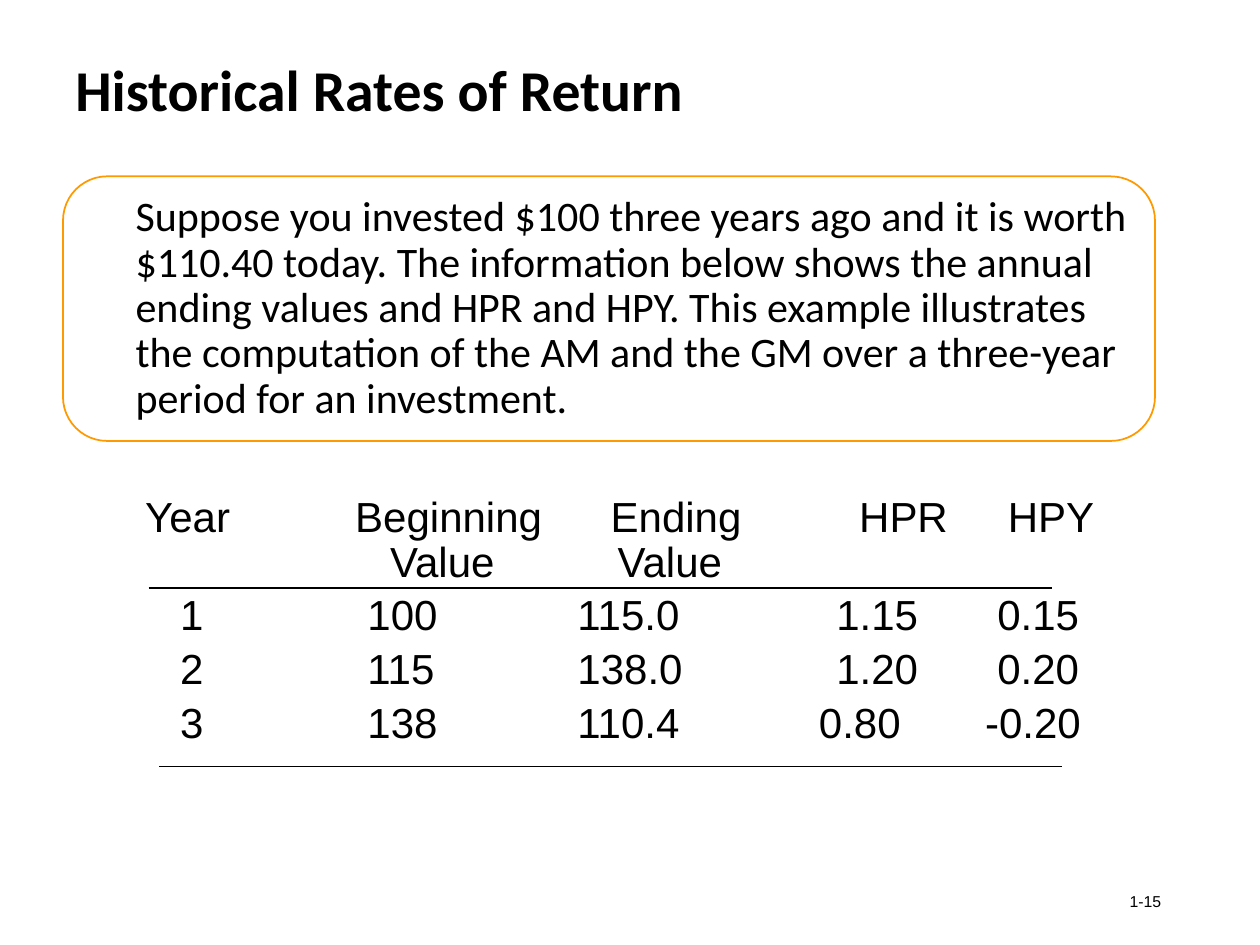
from pptx import Presentation
from pptx.dml.color import RGBColor
from pptx.enum.shapes import MSO_CONNECTOR, MSO_SHAPE
from pptx.enum.text import MSO_ANCHOR, PP_ALIGN
from pptx.oxml.ns import qn
from pptx.util import Pt
from lxml import etree

STRAIGHT = MSO_CONNECTOR.STRAIGHT
ROUNDED = MSO_SHAPE.ROUNDED_RECTANGLE
MIDDLE, TOP = MSO_ANCHOR.MIDDLE, MSO_ANCHOR.TOP
LEFT, RIGHT = PP_ALIGN.LEFT, PP_ALIGN.RIGHT

BLACK, ORANGE = "000000", "FF9900"

COLUMN_EDGES = [83, 203, 330, 468, 563, 640]
# Each row: height, then a (text, left edge) pair for each column
RETURN_ROWS = [
    (26, [("Year", 83), ("Beginning", 203), ("Ending", 349), ("HPR", 491), ("HPY", 576)]),
    (30, [("", 83), ("Value", 223), ("Value", 353), ("", 468), ("", 563)]),
    (31, [("1", 103), ("100", 210), ("115.0", 330), ("1.15", 478), ("0.15", 570)]),
    (31, [("2", 103), ("115", 210), ("138.0", 330), ("1.20", 478), ("0.20", 570)]),
    (27, [("3", 103), ("138", 210), ("110.4", 330), ("0.80", 468), ("-0.20", 563)]),
]


def color(value):
    return RGBColor.from_string(value)


def write(frame, text, size, font, bold=False, align=LEFT, spacing=1.0):
    paragraph = frame.paragraphs[0]
    paragraph.alignment = align
    paragraph.line_spacing = spacing
    run = paragraph.add_run()
    run.text = text
    run.font.size = Pt(size)
    run.font.name = font
    run.font.bold = bold
    run.font.color.rgb = color(BLACK)
    return paragraph


def add_label(slide, box, text, size, font, **style):
    frame = slide.shapes.add_textbox(*map(Pt, box)).text_frame
    frame.word_wrap = True
    frame.vertical_anchor = MIDDLE
    write(frame, text, size, font, **style)


def add_example(slide, box, text):
    panel = slide.shapes.add_shape(ROUNDED, *map(Pt, box))
    panel.adjustments[0] = 0.167
    panel.shadow.inherit = False
    panel.fill.background()
    panel.line.color.rgb = color(ORANGE)
    panel.line.width = Pt(1)
    frame = panel.text_frame
    frame.word_wrap = True
    frame.vertical_anchor = TOP
    paragraph = write(frame, text, 24, "Calibri", spacing=0.9)
    paragraph.space_before = Pt(7.5)
    paragraph._p.get_or_add_pPr().set("marL", str(Pt(27)))


def add_rule(slide, left, top, width):
    rule = slide.shapes.add_connector(STRAIGHT, Pt(left), Pt(top), Pt(left + width), Pt(top))
    rule.line.color.rgb = color(BLACK)
    rule.line.width = Pt(0.75)
    etree.SubElement(rule._element.spPr, qn("a:effectLst"))


def add_returns(slide, left, top):
    """Place the table of returns and the rules below its header and last row."""
    width = COLUMN_EDGES[-1] - COLUMN_EDGES[0]
    height = sum(row_height for row_height, _ in RETURN_ROWS)
    table = slide.shapes.add_table(
        len(RETURN_ROWS), len(COLUMN_EDGES) - 1, Pt(left), Pt(top), Pt(width), Pt(height)
    ).table
    table.first_row = False
    table.horz_banding = False
    for column, start, end in zip(table.columns, COLUMN_EDGES, COLUMN_EDGES[1:]):
        column.width = Pt(end - start)
    for row, (row_height, entries) in zip(table.rows, RETURN_ROWS):
        row.height = Pt(row_height)
        for cell, edge, (text, text_left) in zip(row.cells, COLUMN_EDGES, entries):
            cell.fill.background()
            cell.margin_left = Pt(text_left - edge)
            cell.margin_right = cell.margin_top = cell.margin_bottom = 0
            write(cell.text_frame, text, 24, "Arial", spacing=0.9)
    add_rule(slide, left + 2, top + 51, 516)
    add_rule(slide, left + 8, top + 153, 516)


def main():
    presentation = Presentation()
    presentation.slide_width, presentation.slide_height = Pt(720), Pt(540)
    slide = presentation.slides.add_slide(presentation.slide_layouts[6])
    add_label(slide, (36, 16, 648, 74), "Historical Rates of Return", 33, "Calibri",
              bold=True, spacing=0.9)
    add_example(
        slide, (36, 100.8, 624, 151.2),
        "Suppose you invested $100 three years ago and it is worth $110.40 today. "
        "The information below shows the annual ending values and HPR and HPY. "
        "This example illustrates the computation of the AM and the GM over a "
        "three-year period for an investment.")
    add_returns(slide, COLUMN_EDGES[0], 285)
    add_label(slide, (508.5, 500.5, 162, 29), "1-15", 9, "Arial", align=RIGHT)
    presentation.save("out.pptx")


if __name__ == "__main__":
    main()
